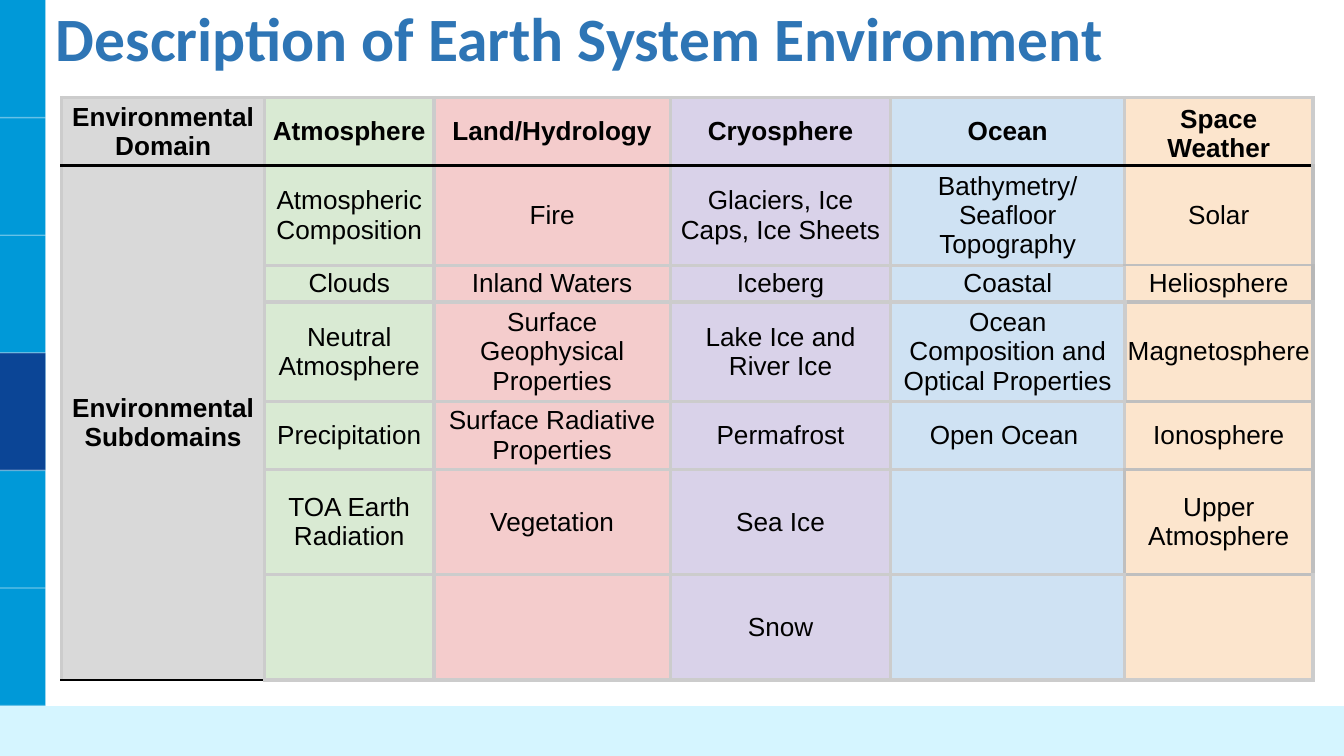
"""Build the slide that describes the Earth system environment."""
from dataclasses import dataclass

from lxml import etree
from pptx import Presentation
from pptx.dml.color import RGBColor
from pptx.enum.shapes import MSO_CONNECTOR, MSO_SHAPE
from pptx.enum.text import MSO_ANCHOR, PP_ALIGN
from pptx.oxml.ns import qn
from pptx.util import Pt

RECT = MSO_SHAPE.RECTANGLE
LINE = MSO_CONNECTOR.STRAIGHT
LEFT, MID = PP_ALIGN.LEFT, PP_ALIGN.CENTER
CENTER, LOW = MSO_ANCHOR.MIDDLE, MSO_ANCHOR.BOTTOM


@dataclass(frozen=True)
class Theme:
    bar: str = "0099D8"
    mark: str = "0B4596"
    foot: str = "D5F5FF"
    title: str = "2E75B5"
    white: str = "FFFFFF"
    black: str = "000000"
    grid: str = "CCCCCC"
    edge: str = "BFBFBF"
    dark: str = "B7B7B7"
    label: str = "D9D9D9"
    head: str = "Calibri"
    body: str = "Arial"
    big: float = 33
    small: float = 14


@dataclass(frozen=True)
class Domain:
    name: str
    fill: str
    width: float
    items: tuple[str, ...]


@dataclass(frozen=True)
class Edge:
    color: str
    width: float = 2


THEME = Theme()
WIDE, HIGH, SIDE, STEP = 720, 405, 24.5, 63
FLOOR = 6 * STEP
ROWS = (34.5, 49.8, 18.6, 49.8, 34.4, 56.4, 56.4)
LAST = len(ROWS) - 1
DOMAINS = (
    Domain("Environmental Domain", THEME.label, 108.7,
           ("Environmental Subdomains",)),
    Domain("Atmosphere", "D9EAD3", 90.7,
           ("Atmospheric Composition", "Clouds", "Neutral Atmosphere",
            "Precipitation", "TOA Earth Radiation")),
    Domain("Land/Hydrology", "F4CCCC", 126.7,
           ("Fire", "Inland Waters", "Surface Geophysical Properties",
            "Surface Radiative Properties", "Vegetation")),
    Domain("Cryosphere", "D9D2E9", 118.1,
           ("Glaciers, Ice Caps, Ice Sheets", "Iceberg",
            "Lake Ice and River Ice", "Permafrost", "Sea Ice", "Snow")),
    Domain("Ocean", "CFE2F3", 125.3,
           ("Bathymetry/ Seafloor Topography", "Coastal",
            "Ocean Composition and Optical Properties", "Open Ocean ")),
    Domain("Space Weather", "FCE5CD", 100.8,
           ("Solar", "Heliosphere", "Magnetosphere", "Ionosphere",
            "Upper Atmosphere")),
)
SPACE = len(DOMAINS) - 1
GRID = Edge(THEME.grid)
BELOW = {1: Edge(THEME.edge, 1), 2: Edge(THEME.edge, 2.25),
         3: Edge(THEME.edge, 2.25), 4: Edge(THEME.edge), 5: Edge(THEME.edge)}
RIGHT = {1: Edge(THEME.edge), 2: Edge(THEME.dark, 2.25),
         3: Edge(THEME.edge, 2.25), 4: Edge(THEME.edge), 5: Edge(THEME.edge)}
INNER = {3: Edge(THEME.grid, 2.25), 5: Edge(THEME.edge)}


def color(code: str) -> RGBColor:
    """Turn a hex code into a colour."""
    return RGBColor.from_string(code)


def write(frame, text: str, *, font: str = THEME.body,
          size: float = THEME.small, ink: str = THEME.black,
          bold: bool = False, align=MID, space: float = 1) -> None:
    """Put one formatted paragraph into a text frame."""
    para = frame.paragraphs[0]
    para.alignment = align
    para.line_spacing = space
    run = para.add_run()
    run.text = text
    run.font.name = font
    run.font.size = Pt(size)
    run.font.bold = bold
    run.font.color.rgb = color(ink)


def paint(shape, fill: str) -> None:
    """Give a shape a flat fill with no line or shadow."""
    shape.shadow.inherit = False
    shape.fill.solid()
    shape.fill.fore_color.rgb = color(fill)
    shape.line.fill.background()


def block(slide, top: float, high: float, fill: str) -> None:
    """Draw one block of the side bar."""
    paint(slide.shapes.add_shape(RECT, 0, Pt(top), Pt(SIDE), Pt(high)), fill)


def rule(slide, start: tuple[float, float], end: tuple[float, float]) -> None:
    """Draw a thin translucent white line."""
    line = slide.shapes.add_connector(LINE, *map(Pt, start + end))
    line.line.width = Pt(0.75)
    line.line.color.rgb = color(THEME.white)
    props = line._element.spPr
    tint = props.find(".//" + qn("a:srgbClr"))
    etree.SubElement(tint, qn("a:alpha"), val="40000")
    etree.SubElement(props, qn("a:effectLst"))


def below(row: int, col: int) -> Edge:
    """Find the edge under a cell."""
    if row == 0:
        return Edge(THEME.black)
    if col == 0:
        return Edge(THEME.black, 1)
    return BELOW.get(row, GRID) if col == SPACE else GRID


def beside(row: int, col: int) -> Edge:
    """Find the edge to the right of a cell."""
    if col == SPACE:
        return RIGHT.get(row, GRID)
    return INNER.get(row, GRID) if col == SPACE - 1 else GRID


def border(cell, row: int, col: int) -> None:
    """Draw the four edges of a cell."""
    props = cell._tc.get_or_add_tcPr()
    edges = {"L": beside(row, col - 1) if col else GRID,
             "R": beside(row, col),
             "T": below(row - 1, col) if row else GRID,
             "B": below(row, col)}
    for side, edge in edges.items():
        line = etree.SubElement(props, qn(f"a:ln{side}"),
                                w=str(int(Pt(edge.width))))
        fill = etree.SubElement(line, qn("a:solidFill"))
        etree.SubElement(fill, qn("a:srgbClr"), val=edge.color)


def chart(slide) -> None:
    """Draw the table of domains and subdomains."""
    shape = slide.shapes.add_table(
        len(ROWS), len(DOMAINS), Pt(33.1), Pt(52.3),
        Pt(sum(item.width for item in DOMAINS)), Pt(sum(ROWS)))
    table = shape.table
    table.first_row = table.horz_banding = False
    for row, high in zip(table.rows, ROWS):
        row.height = Pt(high)
    for col, domain in enumerate(DOMAINS):
        table.columns[col].width = Pt(domain.width)
        texts = (domain.name,) + domain.items
        for row in range(len(ROWS)):
            cell = table.cell(row, col)
            cell.margin_left = cell.margin_right = Pt(1.44)
            cell.margin_top = cell.margin_bottom = Pt(1.44)
            cell.vertical_anchor = LOW if (row, col) == (0, SPACE) else CENTER
            border(cell, row, col)
            cell.fill.solid()
            cell.fill.fore_color.rgb = color(domain.fill)
            if row < len(texts):
                write(cell.text_frame, texts[row], bold=row == 0 or col == 0)
    table.cell(1, 0).merge(table.cell(LAST, 0))


def frame(slide) -> None:
    """Draw the side bar and the footer band."""
    block(slide, 0, HIGH, THEME.bar)
    block(slide, 3 * STEP, STEP, THEME.mark)
    for step in range(1, 7):
        rule(slide, (0, step * STEP), (SIDE, step * STEP))
    rule(slide, (SIDE, 0), (SIDE, HIGH))
    band = slide.shapes.build_freeform(0, HIGH, scale=Pt(1))
    band.add_line_segments([(WIDE, HIGH), (WIDE, FLOOR), (0, FLOOR)])
    paint(band.convert_to_shape(), THEME.foot)


def title(slide) -> None:
    """Write the slide title."""
    box = slide.shapes.add_textbox(Pt(SIDE), Pt(-0.7), Pt(671), Pt(45.4))
    text = box.text_frame
    text.word_wrap = True
    text.vertical_anchor = CENTER
    text.margin_left = text.margin_right = Pt(5.4)
    text.margin_top = text.margin_bottom = Pt(2.7)
    write(text, "Description of Earth System Environment", font=THEME.head,
          size=THEME.big, ink=THEME.title, bold=True, align=LEFT, space=0.9)


def main() -> None:
    """Build and save the deck."""
    deck = Presentation()
    deck.slide_width, deck.slide_height = Pt(WIDE), Pt(HIGH)
    slide = deck.slides.add_slide(deck.slide_layouts[6])
    frame(slide)
    title(slide)
    chart(slide)
    deck.save("out.pptx")


if __name__ == "__main__":
    main()
